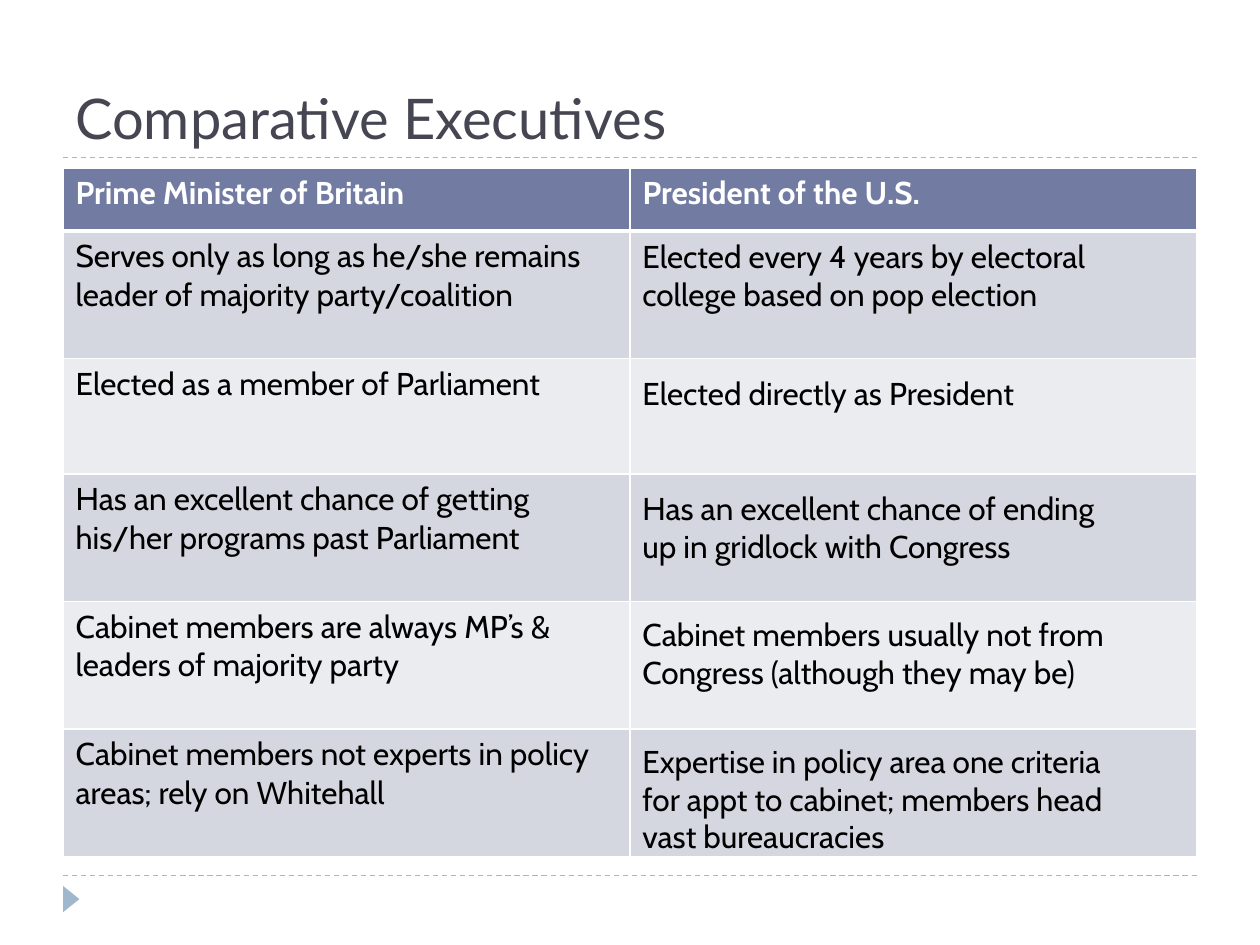
"""Build a slide comparing the British and American executives in a two-column table."""
from lxml.etree import SubElement
from pptx import Presentation
from pptx.dml.color import RGBColor
from pptx.enum.dml import MSO_LINE
from pptx.enum.shapes import MSO_CONNECTOR, MSO_SHAPE
from pptx.enum.text import MSO_ANCHOR, MSO_AUTO_SIZE
from pptx.oxml import parse_xml
from pptx.oxml.ns import nsdecls, qn
from pptx.util import Cm, Pt

TITLE = "Comparative Executives"
HEADERS = ["Prime Minister of Britain", "President of the U.S."]
MINISTER_ROWS = [
    "Serves only as long as he/she remains leader of majority party/coalition",
    "Elected as a member of Parliament",
    "Has an excellent chance of getting his/her programs past Parliament",
    "Cabinet members are always MP’s & leaders of majority party",
    "Cabinet members not experts in policy areas; rely on Whitehall",
]
PRESIDENT_NOTES = [
    (4.66, 1.8, "Elected every 4 years by electoral college based on pop election"),
    (7.41, 1.8, "Elected directly as President"),
    (9.73, 2.57, "Has an excellent chance of ending up in gridlock with Congress"),
    (12.28, 2.57, "Cabinet members usually not from Congress (although they may be)"),
    (14.83, 2.57, "Expertise in policy area one criteria for appt to cabinet; members head vast bureaucracies"),
]
ROW_HEIGHTS = [1.27, 2.57, 2.33, 2.57, 2.57, 2.57]
LEFT, WIDTH, TABLE_TOP = 1.27, 22.86, 3.39
NOTE_LEFT, NOTE_WIDTH = 12.7, 10.16
RULE_TOPS = [17.65, 3.17]

THEME = {
    "title": {"name": "Lato", "size": Pt(32), "bold": False, "color": "464653"},
    "header": {"name": "Cabin", "size": Pt(18), "bold": True, "color": "FFFFFF"},
    "body": {"name": "Cabin", "size": Pt(18), "bold": False, "color": "000000"},
    "header_fill": "727CA3",
    "bands": ["D5D7E0", "EBECF0"],
    "border": "FFFFFF",
    "accent": "9FB8CD",
}


def write(frame, text, style):
    run = frame.paragraphs[0].add_run()
    run.text = text
    for name, value in THEME[style].items():
        if name == "color":
            run.font.color.rgb = RGBColor.from_string(value)
        else:
            setattr(run.font, name, value)


def add_text(slide, box, text, style, frame_format):
    frame = slide.shapes.add_textbox(*map(Cm, box)).text_frame
    for name, value in frame_format.items():
        setattr(frame, name, value)
    write(frame, text, style)


def paint(fill, color):
    fill.solid()
    fill.fore_color.rgb = RGBColor.from_string(color)


def set_borders(cell, row):
    widths = {"lnL": 1, "lnR": 1, "lnT": 3 if row == 1 else 1, "lnB": 3 if row == 0 else 1}
    properties = cell._tc.get_or_add_tcPr()
    for position, (side, width) in enumerate(widths.items()):
        properties.insert(position, parse_xml(
            f'<a:{side} {nsdecls("a")} w="{Pt(width)}"><a:solidFill>'
            f'<a:srgbClr val="{THEME["border"]}"/></a:solidFill></a:{side}>'))


def add_rule(slide, top):
    rule = slide.shapes.add_connector(
        MSO_CONNECTOR.STRAIGHT, Cm(LEFT), Cm(top), Cm(LEFT + WIDTH), Cm(top))
    rule.line.color.rgb = RGBColor.from_string(THEME["accent"])
    for name, value in {"width": Pt(0.75), "dash_style": MSO_LINE.DASH}.items():
        setattr(rule.line, name, value)
    SubElement(rule._element.spPr, qn("a:effectLst"))


def add_marker(slide):
    marker = slide.shapes.add_shape(
        MSO_SHAPE.ISOSCELES_TRIANGLE, Cm(1.17), Cm(17.96), Cm(0.53), Cm(0.33))
    marker.rotation = 90
    marker.shadow.inherit = False
    paint(marker.fill, THEME["accent"])
    marker.line.fill.background()


def add_comparison(slide):
    rows = [HEADERS] + [[text, ""] for text in MINISTER_ROWS]
    table = slide.shapes.add_table(
        len(rows), len(HEADERS), Cm(LEFT), Cm(TABLE_TOP), Cm(WIDTH), Cm(sum(ROW_HEIGHTS))).table
    for row, texts in enumerate(rows):
        table.rows[row].height = Cm(ROW_HEIGHTS[row])
        for column, text in enumerate(texts):
            cell = table.cell(row, column)
            paint(cell.fill, THEME["bands"][(row - 1) % 2] if row else THEME["header_fill"])
            set_borders(cell, row)
            if text:
                write(cell.text_frame, text, "body" if row else "header")


def main():
    presentation = Presentation()
    for name, value in {"slide_width": Cm(25.4), "slide_height": Cm(19.05)}.items():
        setattr(presentation, name, value)
    slide = presentation.slides.add_slide(presentation.slide_layouts[6])
    for top in RULE_TOPS:
        add_rule(slide, top)
    add_marker(slide)
    add_text(slide, (LEFT, 0.43, WIDTH, 2.74), TITLE, "title",
             {"word_wrap": True, "vertical_anchor": MSO_ANCHOR.BOTTOM})
    add_comparison(slide)
    for top, height, text in PRESIDENT_NOTES:
        add_text(slide, (NOTE_LEFT, top, NOTE_WIDTH, height), text, "body",
                 {"word_wrap": True, "auto_size": MSO_AUTO_SIZE.SHAPE_TO_FIT_TEXT})
    presentation.save("out.pptx")


if __name__ == "__main__":
    main()
